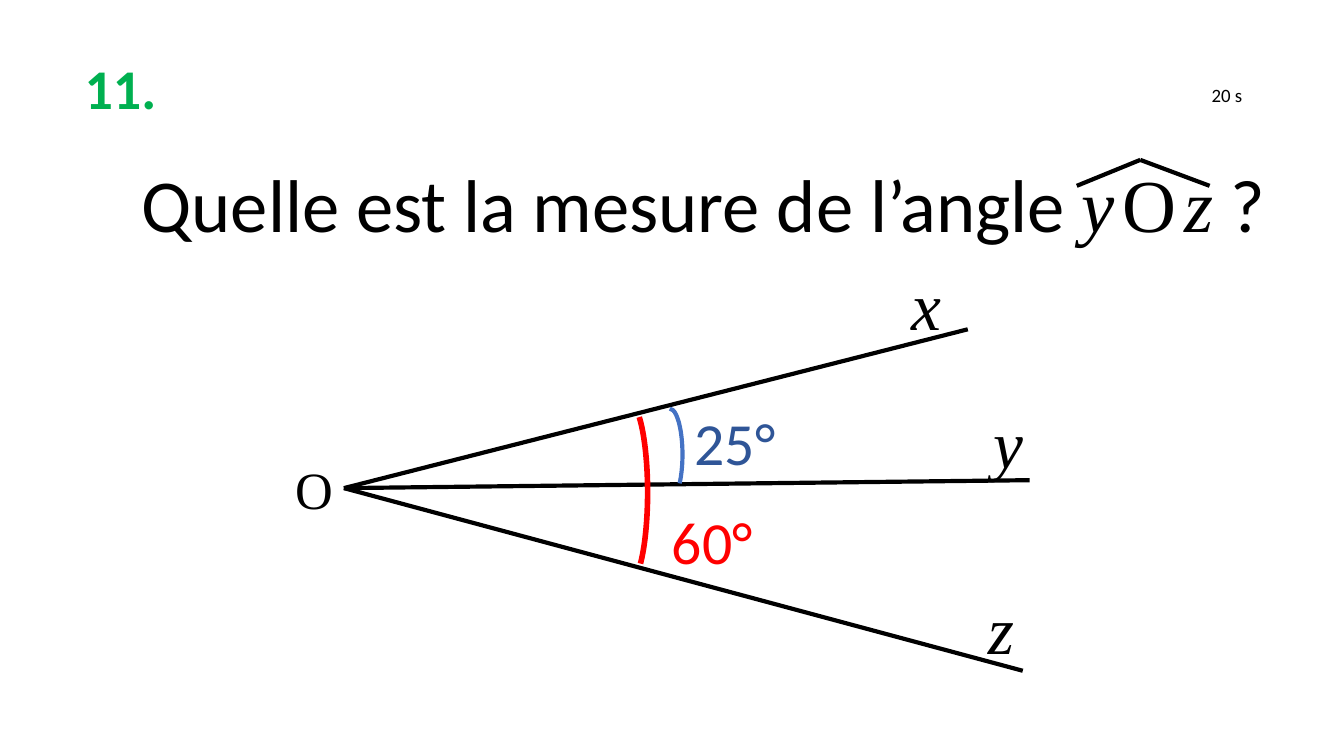
import pptx
import pptx.util
import pptx.dml.color
import pptx.enum.shapes
import pptx.enum.text
import pptx.oxml.ns
from lxml import etree
from pptx.util import Cm

SANS = "Calibri"
SERIF = "Times New Roman"
BLACK = "000000"
RED = "FF0000"


def rgb(hex_color):
    return pptx.dml.color.RGBColor.from_string(hex_color)


def set_line(line, color, width=2.25):
    line.color.rgb = rgb(color)
    line.width = pptx.util.Pt(width)


def place(sp, left, top, width, height):
    sp.left, sp.top, sp.width, sp.height = Cm(left), Cm(top), Cm(width), Cm(height)


def add_run(p, text, size, font=SANS, color=BLACK, bold=False, italic=False):
    r = p.add_run()
    r.text = text
    r.font.name = font
    r.font.size = pptx.util.Pt(size)
    r.font.color.rgb = rgb(color)
    r.font.bold = bold
    r.font.italic = italic


def add_label(slide, box, text, size, spacing=1.0, wrap=True, **style):
    sp = slide.shapes.add_textbox(*(Cm(v) for v in box))
    tf = sp.text_frame
    tf.word_wrap = wrap
    tf.auto_size = pptx.enum.text.MSO_AUTO_SIZE.SHAPE_TO_FIT_TEXT
    p = tf.paragraphs[0]
    p.line_spacing = spacing
    add_run(p, text, size, **style)


def add_segment(slide, start, end):
    cx = slide.shapes.add_connector(
        pptx.enum.shapes.MSO_CONNECTOR.STRAIGHT,
        *(Cm(v) for v in (*start, *end)))
    set_line(cx.line, BLACK)
    sp_pr = cx._element.spPr
    etree.SubElement(sp_pr, pptx.oxml.ns.qn("a:effectLst"))


def add_arc(slide, box, start, end, color, width):
    """Draw an arc clockwise between two angles in degrees, 0 pointing right."""
    sp = slide.shapes.add_shape(
        pptx.enum.shapes.MSO_SHAPE.ARC, *(Cm(v) for v in box))
    sp.shadow.inherit = False
    sp.fill.background()
    set_line(sp.line, color, width)
    # Adjustments count in 100000ths, angles in 60000ths of a degree.
    for i, angle in enumerate((start, end)):
        sp.adjustments[i] = angle * 0.6


def add_question(slide):
    title = slide.shapes.title
    place(title, 1.19, 2.84, 24.21, 1.96)
    set_line(title.line, "FFFFFF")
    tf = title.text_frame
    tf.word_wrap = True
    tf.auto_size = pptx.enum.text.MSO_AUTO_SIZE.NONE
    tf.vertical_anchor = pptx.enum.text.MSO_ANCHOR.MIDDLE
    p = tf.paragraphs[0]
    p.alignment = pptx.enum.text.PP_ALIGN.CENTER
    p.line_spacing = 1.0
    add_run(p, "Quelle est la mesure de l’angle ", 40)
    add_run(p, "y", 40, SERIF, italic=True)
    add_run(p, " ", 16, SERIF, italic=True)
    add_run(p, "O", 40, SERIF)
    add_run(p, " ", 18, SERIF)
    add_run(p, "z", 40, SERIF, italic=True)
    add_run(p, " ?", 40)

    hat_top = (21.55, 3.02)
    for x in (20.35, 22.86):
        add_segment(slide, (x, 3.51), hat_top)


def add_angle_figure(slide):
    origin = (6.5, 9.22)
    rays = [
        ("x", (18.29, 6.22), (16.97, 4.72, 1.24, 1.85)),
        ("y", (19.46, 9.07), (18.52, 7.34, 0.99, 1.85)),
        ("z", (19.33, 12.67), (18.42, 10.85, 0.99, 1.85)),
    ]
    for name, end, box in rays:
        add_segment(slide, end, origin)
        add_label(slide, box, name, 36, 1.08, font=SERIF, italic=True)
    add_label(slide, (5.33, 8.41, 0.99, 1.73), "O", 28, 1.08, font=SERIF)

    add_arc(slide, (12.42, 7.72, 0.48, 1.73), 270, 71.17, "4472C4", 2.25)
    add_label(slide, (12.88, 7.44, 2.49, 1.68), "25°", 32, 1.08, color="2F5597")
    add_arc(slide, (11.53, 7.59, 0.71, 3.43), 277.89, 80.67, RED, 3)
    add_label(slide, (12.45, 9.3, 3.23, 1.68), "60°", 32, 1.08, color=RED)


def main():
    prs = pptx.Presentation()
    prs.slide_width, prs.slide_height = Cm(25.4), Cm(14.28)
    slide = prs.slides.add_slide(prs.slide_layouts[5])
    add_label(slide, (1.35, 0.89, 1.88, 1.55), "11.", 30, wrap=False,
              color="00B050", bold=True)
    add_label(slide, (22.65, 1.45, 1.47, 0.69), "20 s", 10.1)
    add_question(slide)
    add_angle_figure(slide)
    prs.save("out.pptx")


if __name__ == "__main__":
    main()
